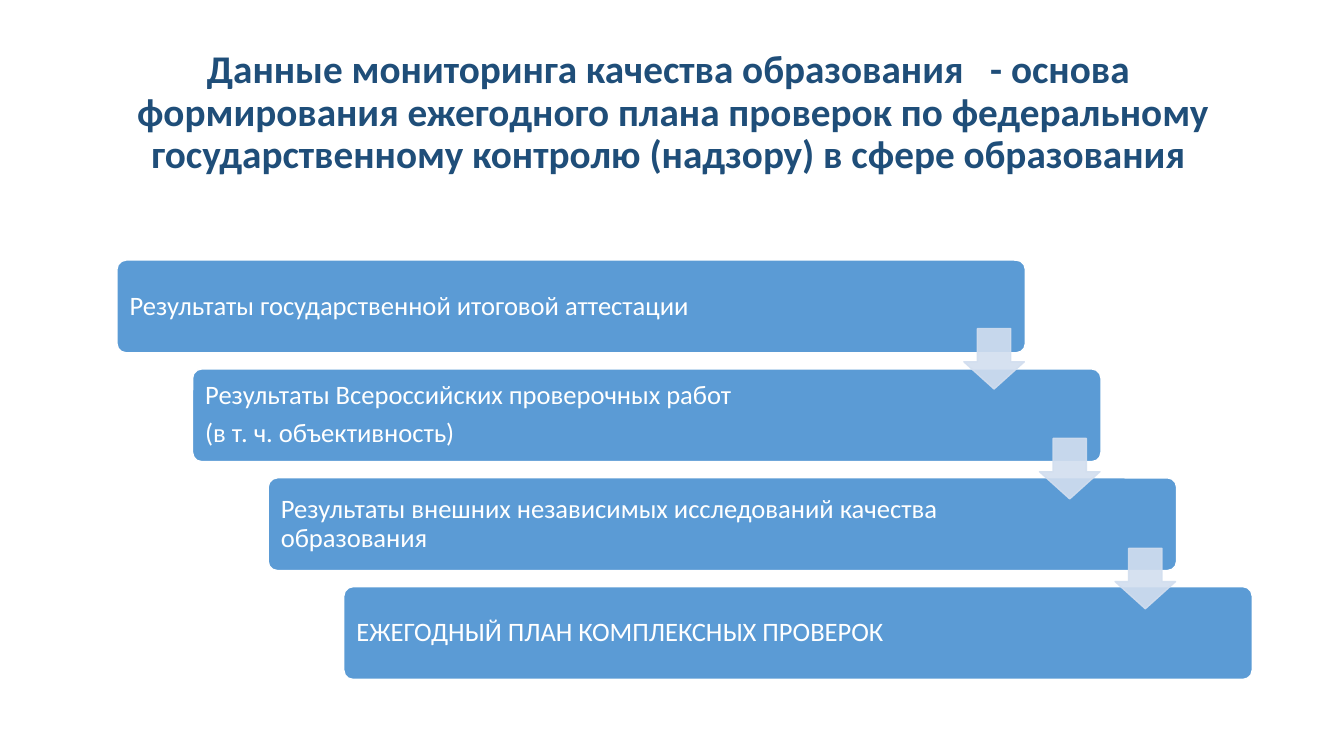
from lxml import etree
from pptx import Presentation
from pptx.dml.color import RGBColor
from pptx.enum.shapes import MSO_SHAPE
from pptx.enum.text import MSO_ANCHOR, MSO_AUTO_SIZE, PP_ALIGN
from pptx.oxml.ns import qn
from pptx.util import Inches, Pt

TITLE = (
    "Данные мониторинга качества образования   - основа \v"
    "формирования ежегодного плана проверок по федеральному "
    "государственному контролю (надзору) в сфере образования "
)
STEPS = [
    ["Результаты государственной итоговой аттестации"],
    ["Результаты Всероссийских проверочных работ", "(в т. ч. объективность)"],
    ["Результаты внешних независимых исследований качества образования"],
    ["ЕЖЕГОДНЫЙ ПЛАН КОМПЛЕКСНЫХ ПРОВЕРОК"],
]

NAVY = RGBColor(0x1F, 0x4E, 0x79)
BLUE = RGBColor(0x5B, 0x9B, 0xD5)
PALE_BLUE = RGBColor(0xD2, 0xDE, 0xEF)
WHITE = RGBColor(0xFF, 0xFF, 0xFF)

ROUNDED, DOWN_ARROW = MSO_SHAPE.ROUNDED_RECTANGLE, MSO_SHAPE.DOWN_ARROW
MIDDLE, NO_AUTOFIT = MSO_ANCHOR.MIDDLE, MSO_AUTO_SIZE.NONE
LEFT, CENTER = PP_ALIGN.LEFT, PP_ALIGN.CENTER

STEP_LEFT, STEP_TOP, STEP_WIDTH, STEP_HEIGHT = 1.16, 2.58, 9.01, 0.92
ARROW_LEFT, ARROW_TOP, ARROW_SIZE = 9.56, 3.26, 0.6
SHIFT_RIGHT, SHIFT_DOWN, ARROW_SHIFT_DOWN = 0.75, 1.08, 1.09

FRAME = {
    "word_wrap": True,
    "auto_size": NO_AUTOFIT,
    "vertical_anchor": MIDDLE,
}
STEP_FRAME = {
    **FRAME,
    "margin_left": Inches(0.1),
    "margin_right": Inches(1.46),
    "margin_top": Inches(0.08),
    "margin_bottom": Inches(0.08),
}
TITLE_PARA = {"alignment": CENTER, "line_spacing": 0.9}
STEP_PARA = {"alignment": LEFT, "line_spacing": 0.9, "space_after": Pt(6.65)}
TITLE_FONT = {"name": "Calibri", "size": Pt(28), "bold": True}
STEP_FONT = {"name": "Calibri", "size": Pt(19)}


def apply(target, values):
    for name, value in values.items():
        setattr(target, name, value)


def write(shape, lines, frame_format, para_format, font_format, color):
    frame = shape.text_frame
    frame.text = "\n".join(lines)
    apply(frame, frame_format)
    for para in frame.paragraphs:
        apply(para, para_format)
        for span in para.runs:
            apply(span.font, font_format)
            span.font.color.rgb = color


def add_block(slide, kind, box, adjustments, fill, line):
    shape = slide.shapes.add_shape(kind, *map(Inches, box))
    shape.shadow.inherit = False
    for index, value in enumerate(adjustments):
        shape.adjustments[index] = value
    shape.fill.solid()
    shape.fill.fore_color.rgb = fill
    shape.line.color.rgb = line
    shape.line.width = Pt(1)
    return shape


def set_opacity(shape, percent):
    """Apply the opacity to both the fill and the outline."""
    for color in shape.fill._xPr.iter(qn("a:srgbClr")):
        etree.SubElement(color, qn("a:alpha"), val=str(percent * 1000))


def main():
    deck = Presentation()
    deck.slide_width, deck.slide_height = Inches(13.33), Inches(7.5)
    slide = deck.slides.add_slide(deck.slide_layouts.get_by_name("Title Only"))

    title = slide.shapes.title
    apply(title, {"left": Inches(0.92), "top": Inches(0.4),
                  "width": Inches(11.5), "height": Inches(1.45)})
    write(title, [TITLE], FRAME, TITLE_PARA, TITLE_FONT, NAVY)

    for index, lines in enumerate(STEPS):
        box = (STEP_LEFT + index * SHIFT_RIGHT, STEP_TOP + index * SHIFT_DOWN,
               STEP_WIDTH, STEP_HEIGHT)
        step = add_block(slide, ROUNDED, box, [0.1], BLUE, WHITE)
        write(step, lines, STEP_FRAME, STEP_PARA, STEP_FONT, WHITE)

    for index in range(len(STEPS) - 1):
        box = (ARROW_LEFT + index * SHIFT_RIGHT,
               ARROW_TOP + index * ARROW_SHIFT_DOWN, ARROW_SIZE, ARROW_SIZE)
        # The preset lists head length first, then shaft width
        arrow = add_block(slide, DOWN_ARROW, box, [0.55, 0.45], PALE_BLUE, PALE_BLUE)
        set_opacity(arrow, 90)

    deck.save("out.pptx")


if __name__ == "__main__":
    main()
